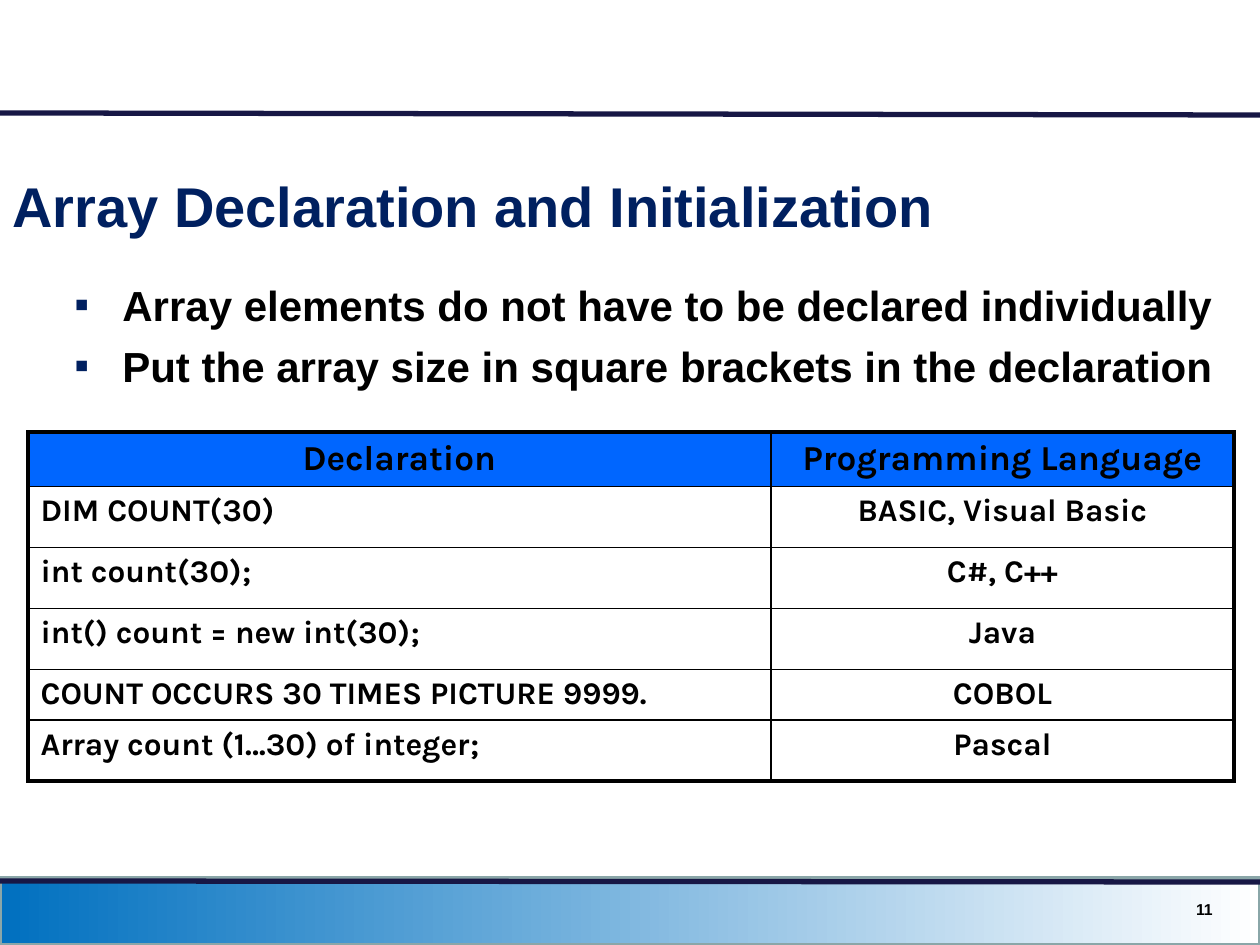
from typing import Any, NamedTuple

import pptx
import pptx.dml.color
import pptx.enum.shapes
import pptx.enum.text
import pptx.oxml
import pptx.oxml.ns
import pptx.util
from lxml import etree

EMU_PER_PX = 914400 / 126
COLORS = {
    "black": "000000",
    "navy": "002060",
    "rule": "171745",
    "band": "0070C0",
    "white": "FFFFFF",
    "band_edge": "8AA6A8",
    "header": "0066FF",
}
ALIGN = pptx.enum.text.PP_ALIGN
ANCHOR = pptx.enum.text.MSO_ANCHOR


class Rule(NamedTuple):
    y1: int
    y2: int


class Text(NamedTuple):
    x: int
    y: int
    w: int
    h: int
    lines: list[str]
    size: int
    color: str = "black"
    anchor: Any = ANCHOR.MIDDLE
    align: Any = ALIGN.LEFT
    bullet: str = ""


class Row(NamedTuple):
    h: int
    declaration: str
    language: str


RULES = [Rule(113, 115), Rule(881, 882)]
TEXTS = [
    Text(0, 144, 1207, 122, ["Array Declaration and Initialization"], 32, "navy"),
    Text(931, 891, 294, 37, ["11"], 9, align=ALIGN.RIGHT),
    Text(62, 273, 1198, 567, [
        "Array elements do not have to be declared individually",
        "Put the array size in square brackets in the declaration",
    ], 24, anchor=ANCHOR.TOP, bullet="▪"),
]
COLUMNS = [743, 463]
ROWS = [
    Row(53, "Declaration", "Programming Language"),
    Row(61, "DIM COUNT(30)", "BASIC, Visual Basic"),
    Row(61, "int count(30);", "C#, C++"),
    Row(61, "int() count = new int(30);", "Java"),
    Row(49, "COUNT OCCURS 30 TIMES PICTURE 9999.", "COBOL"),
    Row(61, "Array count (1…30) of integer;", "Pascal"),
]


def px(n: int) -> int:
    return round(n * EMU_PER_PX)


def rgb(name: str) -> pptx.dml.color.RGBColor:
    return pptx.dml.color.RGBColor.from_string(COLORS[name])


def apply(obj: Any, values: dict[str, Any]) -> None:
    for key, value in values.items():
        setattr(obj, key, value)


def sub(parent: Any, tag: str, **attrs: str) -> Any:
    return etree.SubElement(parent, pptx.oxml.ns.qn(tag), attrs)


def add_run(p: Any, text: str, font: str, size: int, color: str) -> None:
    r = p.add_run()
    r.text = text
    apply(r.font, {"name": font, "size": pptx.util.Pt(size), "bold": True})
    r.font.color.rgb = rgb(color)


def add_band(s: Any) -> None:
    sp = s.shapes.add_shape(pptx.enum.shapes.MSO_SHAPE.RECTANGLE,
                            0, px(878), px(1260), px(67))
    sp.shadow.inherit = False
    sp.fill.gradient()
    sp.fill.gradient_angle = 0
    for stop, color, position in zip(sp.fill.gradient_stops, ("band", "white"), (0, 1)):
        stop.color.rgb = rgb(color)
        stop.position = position
    sp.line.color.rgb = rgb("band_edge")
    sp.line.width = pptx.util.Pt(2)


def add_rule(s: Any, rule: Rule) -> None:
    sp = s.shapes.add_connector(pptx.enum.shapes.MSO_CONNECTOR.STRAIGHT,
                                0, px(rule.y1), px(1260), px(rule.y2))
    sp.line.color.rgb = rgb("rule")
    sp.line.width = pptx.util.Pt(3)
    sub(sp._element.spPr, "a:effectLst")


def add_bullet(p: Any, char: str) -> None:
    pPr = p._p.get_or_add_pPr()
    indent = px(48)
    pPr.set("marL", str(indent))
    pPr.set("indent", str(-indent))
    sub(sub(pPr, "a:buClr"), "a:srgbClr", val=COLORS["navy"])
    sub(pPr, "a:buFont", typeface="Arial")
    sub(pPr, "a:buChar", char=char)


def add_text(s: Any, text: Text) -> None:
    sp = s.shapes.add_textbox(px(text.x), px(text.y), px(text.w), px(text.h))
    tf = sp.text_frame
    apply(tf, {"word_wrap": True, "vertical_anchor": text.anchor})
    for i, line in enumerate(text.lines):
        p = tf.add_paragraph() if i else tf.paragraphs[0]
        p.alignment = text.align
        if text.bullet:
            add_bullet(p, text.bullet)
        if i:
            p.space_before = pptx.util.Pt(6)
        add_run(p, line, "Arial", text.size, text.color)


def add_borders(cell: Any, outer: dict[str, bool]) -> None:
    tcPr = cell._tc.get_or_add_tcPr()
    for side, is_outer in outer.items():
        width = pptx.util.Pt(2.25 if is_outer else 1)
        ln = sub(tcPr, f"a:ln{side}", w=str(int(width)))
        sub(sub(ln, "a:solidFill"), "a:srgbClr", val=COLORS["black"])


def add_declarations(s: Any) -> None:
    table = s.shapes.add_table(len(ROWS), len(COLUMNS), px(28), px(432),
                               px(sum(COLUMNS)), px(sum(row.h for row in ROWS))).table
    apply(table, {"first_row": False, "horz_banding": False})
    for column, width in zip(table.columns, COLUMNS):
        column.width = px(width)
    for i, row in enumerate(ROWS):
        table.rows[i].height = px(row.h)
        for j, text in enumerate((row.declaration, row.language)):
            cell = table.cell(i, j)
            add_borders(cell, {"L": j == 0, "R": j == len(COLUMNS) - 1,
                               "T": i == 0, "B": i == len(ROWS) - 1})
            if i == 0:
                cell.fill.solid()
                cell.fill.fore_color.rgb = rgb("header")
            else:
                cell.fill.background()
            p = cell.text_frame.paragraphs[0]
            p.alignment = ALIGN.LEFT if i and j == 0 else ALIGN.CENTER
            add_run(p, text, "Karla", 18 if i else 20, "black")


def main() -> None:
    prs = pptx.Presentation()
    apply(prs, {"slide_width": px(1260), "slide_height": px(945)})
    s = prs.slides.add_slide(prs.slide_layouts[6])
    add_band(s)
    for rule in RULES:
        add_rule(s, rule)
    for text in TEXTS:
        add_text(s, text)
    add_declarations(s)
    prs.save("out.pptx")


if __name__ == "__main__":
    main()
